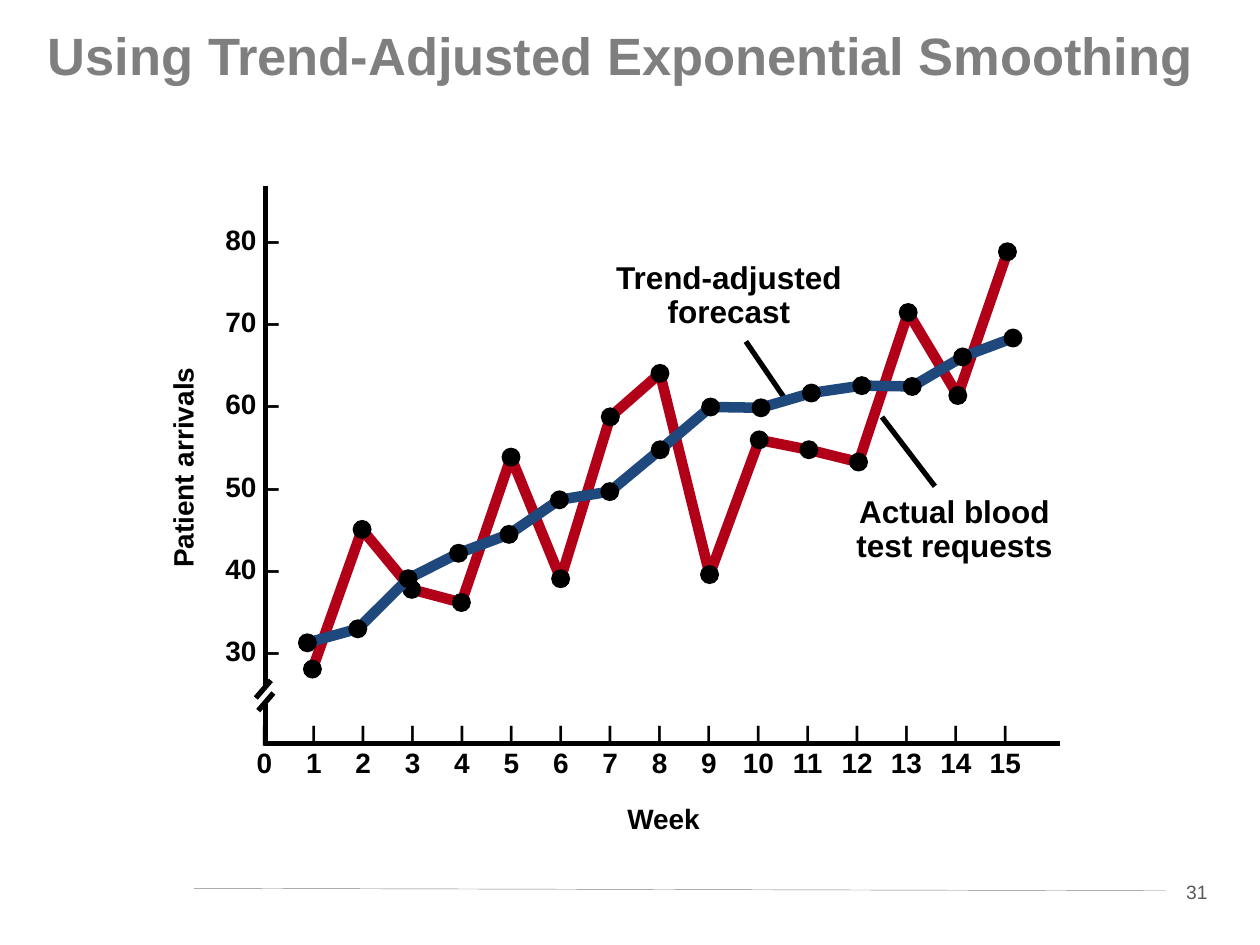
from dataclasses import dataclass

from lxml.etree import SubElement
from pptx import Presentation
from pptx.dml.color import RGBColor
from pptx.enum.shapes import MSO_CONNECTOR as Connector, MSO_SHAPE as Shape
from pptx.enum.text import MSO_ANCHOR as Anchor, PP_ALIGN as Align
from pptx.oxml.ns import qn
from pptx.util import Inches, Pt


@dataclass(frozen=True)
class Theme:
    font: str = "Arial"
    ink: str = "000000"
    title: str = "7F7F7F"
    footer: str = "595959"
    rule: str = "808080"
    paper: str = "FFFFFF"
    actual: str = "B20019"
    forecast: str = "1F497D"
    title_size: int = 30
    callout_size: int = 18
    label_size: int = 16
    tick_size: int = 12
    footer_size: int = 11
    axis_width: float = 3
    series_width: float = 6


THEME = Theme()
ACTUAL = [28, 45, 37.7, 36.1, 53.8, 39, 58.7, 64, 39.5, 55.9, 54.7, 53.2, 71.4, 61.3, 78.8]
FORECAST = [31.2, 32.9, 39, 42.1, 44.4, 48.6, 49.6, 54.7, 59.9, 59.8, 61.6, 62.5, 62.4, 66, 68.3]
WEEKS = range(16)
MARKER = 0.14
TICK_STEP = 0.392


def color(value):
    return RGBColor.from_string(value)


def style_text(paragraph, size, ink=THEME.ink, bold=True):
    for run in paragraph.runs:
        run.font.name = THEME.font
        run.font.size = Pt(size)
        run.font.bold = bold
        run.font.color.rgb = color(ink)


def add_text(slide, box, text, size, align=Align.LEFT, wrap=True, spacing=None):
    shape = slide.shapes.add_textbox(*map(Inches, box))
    shape.text_frame.word_wrap = wrap
    shape.text_frame.text = text
    for paragraph in shape.text_frame.paragraphs:
        paragraph.alignment = align
        paragraph.line_spacing = spacing
        style_text(paragraph, size)
    return shape


def add_line(slide, start, end, ink=THEME.ink, width=THEME.axis_width):
    line = slide.shapes.add_connector(Connector.STRAIGHT, *map(Inches, (*start, *end)))
    line.line.color.rgb = color(ink)
    line.line.width = Pt(width)
    SubElement(line._element.spPr, qn("a:effectLst"))


def add_path(slide, points, ink, width):
    start, *others = [(Inches(x), Inches(y)) for x, y in points]
    builder = slide.shapes.build_freeform(*start)
    builder.add_line_segments(others, close=False)
    shape = builder.convert_to_shape()
    shape.shadow.inherit = False
    shape.fill.background()
    shape.line.color.rgb = color(ink)
    shape.line.width = Pt(width)


def add_centered_tabs(paragraph, first, step, count):
    tabs = SubElement(paragraph._p.get_or_add_pPr(), qn("a:tabLst"))
    for index in range(count):
        position = str(Inches(first + step * index))
        SubElement(tabs, qn("a:tab"), pos=position, algn="ctr")


def add_week_axis(slide, left, top, width):
    labels = slide.shapes.add_textbox(*map(Inches, (left - 0.6, top + 4.19, width + 0.42, 0.56)))
    frame = labels.text_frame
    frame.word_wrap = True
    rows = (
        (["|" for week in WEEKS], THEME.tick_size),
        ([str(week) for week in WEEKS], THEME.label_size),
    )
    frame.text = "\n".join("\t" + "\t".join(cells) for cells, size in rows)
    for paragraph, (cells, size) in zip(frame.paragraphs, rows):
        add_centered_tabs(paragraph, 0.49, TICK_STEP, len(WEEKS))
        style_text(paragraph, size)
    add_text(slide, (left + 2.77, top + 4.83, 0.78, 0.36), "Week", THEME.label_size, wrap=False)


def add_arrivals_axis(slide, left, top):
    ticks = "\n".join(f"{value} –" for value in range(80, 20, -10))
    add_text(slide, (left - 0.42, top - 0.15, 0.63, 4.02), ticks, THEME.label_size,
             wrap=False, spacing=Pt(47))
    caption = add_text(slide, (left - 1.56, top + 2.05, 1.79, 0.36), "Patient arrivals",
                       THEME.label_size, wrap=False)
    caption.rotation = 270


def add_axis_lines(slide, left, top, width, height):
    bottom = top + height
    add_line(slide, (left, top), (left, bottom - 0.45))
    corner = [(left, bottom - 0.31), (left, bottom), (left + width, bottom)]
    add_path(slide, corner, THEME.ink, THEME.axis_width)
    for x, y in ((left - 0.08, bottom - 0.36), (left - 0.06, bottom - 0.26)):
        add_line(slide, (x, y), (x + 0.12, y - 0.14))


def add_series(slide, left, top, values, step, ink):
    points = [
        (left + step * index, top + 3.7 - (value - 30) * 0.0652)
        for index, value in enumerate(values)
    ]
    add_path(slide, points, ink, THEME.series_width)
    for x, y in points:
        box = (x - MARKER / 2, y - MARKER / 2, MARKER, MARKER)
        marker = slide.shapes.add_shape(Shape.OVAL, *map(Inches, box))
        marker.shadow.inherit = False
        marker.fill.solid()
        marker.fill.fore_color.rgb = color(THEME.ink)
        marker.line.color.rgb = color(THEME.ink)
        marker.line.width = Pt(0.75)


def add_callout(slide, box, text, start, end):
    add_text(slide, box, text, THEME.callout_size, Align.CENTER, spacing=0.9)
    add_line(slide, start, end)


def add_chart_region(slide, left, top, width, height):
    add_week_axis(slide, left, top, width)
    add_arrivals_axis(slide, left, top)
    add_axis_lines(slide, left, top, width, height)
    add_callout(slide, (left + 4.57, top + 2.41, 1.79, 0.64), "Actual blood test requests",
                (left + 4.89, top + 1.83), (left + 5.31, top + 2.38))
    add_callout(slide, (left + 2.63, top + 0.55, 2.09, 0.65), "Trend-adjusted forecast",
                (left + 3.81, top + 1.23), (left + 4.11, top + 1.67))
    add_series(slide, left + 0.37, top, ACTUAL, 0.394, THEME.actual)
    add_series(slide, left + 0.33, top, FORECAST, 0.4, THEME.forecast)


def add_title(slide, left, top, width, height):
    title = slide.shapes.title
    title.left, title.top, title.width, title.height = map(Inches, (left, top, width, height))
    frame = title.text_frame
    frame.text = "Using Trend-Adjusted Exponential Smoothing"
    frame.vertical_anchor = Anchor.TOP
    frame.paragraphs[0].alignment = Align.LEFT
    style_text(frame.paragraphs[0], THEME.title_size, THEME.title)


def add_footer(slide, left, top, width, height):
    number = slide.shapes.add_shape(Shape.RECTANGLE, *map(Inches, (left, top, width, height)))
    number.shadow.inherit = False
    number.fill.solid()
    number.fill.fore_color.rgb = color(THEME.paper)
    number.line.fill.background()
    number.text_frame.text = "31"
    paragraph = number.text_frame.paragraphs[0]
    paragraph.alignment = Align.CENTER
    style_text(paragraph, THEME.footer_size, THEME.footer, bold=False)
    add_line(slide, (1.54, top + 0.12), (left, top + 0.14), THEME.rule, 0.25)


def main():
    presentation = Presentation()
    presentation.slide_width, presentation.slide_height = Inches(10), Inches(7.5)
    slide = presentation.slides.add_slide(presentation.slide_layouts[5])
    add_footer(slide, 9.25, 6.93, 0.5, 0.29)
    add_title(slide, 0.28, 0.13, 9.61, 1.01)
    add_chart_region(slide, 2.11, 1.48, 6.3, 4.42)
    presentation.save("out.pptx")


if __name__ == "__main__":
    main()
